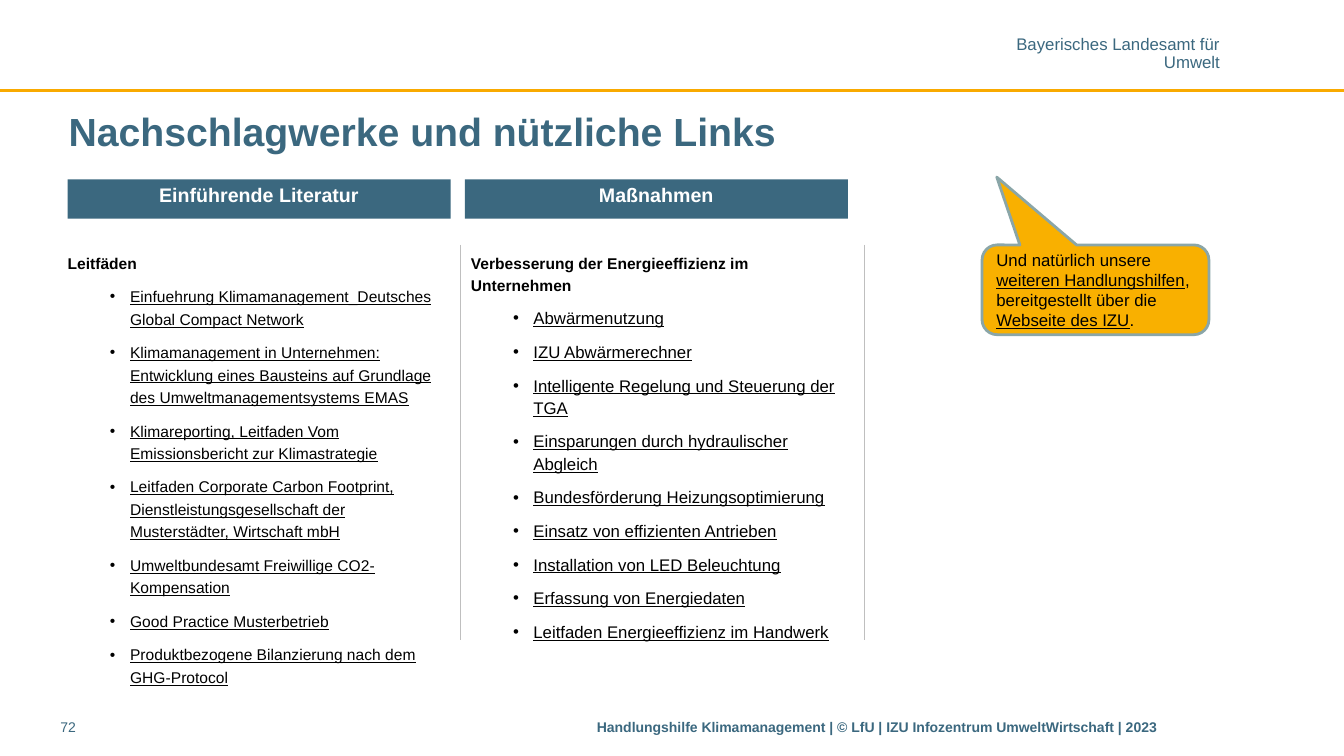
from lxml import etree
from pptx import Presentation
from pptx.dml.color import RGBColor
from pptx.enum.shapes import MSO_CONNECTOR, MSO_SHAPE
from pptx.enum.text import MSO_ANCHOR, MSO_AUTO_SIZE, PP_ALIGN
from pptx.oxml.ns import qn
from pptx.util import Inches, Pt

BLUE = RGBColor(0x3B, 0x68, 0x7F)
GOLD = RGBColor(0xF9, 0xAA, 0x00)
CALLOUT_GOLD = RGBColor(0xF9, 0xB0, 0x00)
CALLOUT_EDGE = RGBColor(0x8A, 0xA6, 0xA8)
GREY = RGBColor(0xBF, 0xBF, 0xBF)
BLACK = RGBColor(0x00, 0x00, 0x00)
WHITE = RGBColor(0xFF, 0xFF, 0xFF)

SLIDE_W, SLIDE_H = 13.33, 7.5
LEFT, COLUMN_STEP, COLUMN_W = 0.67, 4.0, 3.78
BAR_TOP, BAR_STEP, BAR_W, BAR_H = 1.78, 3.94, 3.8, 0.39
LIST_TOP, DIVIDER_BOTTOM = 2.43, 6.35
FOOTER_TOP, FOOTER_H = 7.08, 0.31

COLUMNS = [
    ("Einführende Literatur", "Leitfäden", 4.56, 11.1, [
        "Einfuehrung Klimamanagement_Deutsches Global Compact Network",
        "Klimamanagement in Unternehmen: Entwicklung eines Bausteins auf "
        "Grundlage des Umweltmanagementsystems EMAS",
        "Klimareporting, Leitfaden Vom Emissionsbericht zur Klimastrategie",
        "Leitfaden Corporate Carbon Footprint, Dienstleistungsgesellschaft "
        "der Musterstädter, Wirtschaft mbH",
        "Umweltbundesamt Freiwillige CO2-Kompensation",
        "Good Practice Musterbetrieb",
        "Produktbezogene Bilanzierung nach dem GHG-Protocol",
    ]),
    ("Maßnahmen", "Verbesserung der Energieeffizienz im Unternehmen", 4.15, 12, [
        "Abwärmenutzung",
        "IZU Abwärmerechner",
        "Intelligente Regelung und Steuerung der TGA",
        "Einsparungen durch hydraulischer Abgleich",
        "Bundesförderung Heizungsoptimierung",
        "Einsatz von effizienten Antrieben",
        "Installation von LED Beleuchtung",
        "Erfassung von Energiedaten",
        "Leitfaden Energieeffizienz im Handwerk",
    ]),
]

prs = Presentation()
prs.slide_width, prs.slide_height = Inches(SLIDE_W), Inches(SLIDE_H)
slide = prs.slides.add_slide(prs.slide_layouts[5])


def add_rule(x1, y1, x2, y2, color, width):
    """Draw a straight line without a shadow."""
    rule = slide.shapes.add_connector(
        MSO_CONNECTOR.STRAIGHT, Inches(x1), Inches(y1), Inches(x2), Inches(y2))
    rule.line.color.rgb = color
    rule.line.width = Pt(width)
    etree.SubElement(rule._element.spPr, qn("a:effectLst"))


def write(shape, lines, size, color, bold=False, inset=0.05):
    """Fill a shape with one paragraph per line and return its text frame."""
    frame = shape.text_frame
    frame.text = "\n".join(lines)
    frame.word_wrap = True
    frame.auto_size = MSO_AUTO_SIZE.NONE
    frame.margin_left = frame.margin_right = 0
    frame.margin_top = frame.margin_bottom = Inches(inset)
    for paragraph in frame.paragraphs:
        for run in paragraph.runs:
            run.font.name = "Arial"
            run.font.size = Pt(size)
            run.font.color.rgb = color
            run.font.bold = bold
    return frame


# Page frame
add_rule(0, 0.9, SLIDE_W, 0.9, GOLD, 2)

agency = slide.shapes.add_textbox(Inches(10.07), Inches(0.37), Inches(2.03), Inches(0.34))
agency_text = write(agency, ["Bayerisches Landesamt für", "Umwelt"], 12, BLUE, inset=0)
for paragraph in agency_text.paragraphs:
    paragraph.alignment = PP_ALIGN.RIGHT
    paragraph.line_spacing = 0.85

title = slide.shapes.title
title.left, title.top = Inches(0.68), Inches(0.83)
title.width, title.height = Inches(8.94), Inches(0.94)
title_text = write(title, ["Nachschlagwerke und nützliche Links"], 28, BLUE, bold=True)
title_text.vertical_anchor = MSO_ANCHOR.MIDDLE
title_text.paragraphs[0].alignment = PP_ALIGN.LEFT

for left, width, words, bold in [
    (0.6, 0.7, "72", False),
    (5.92, 6.99, "Handlungshilfe Klimamanagement | © LfU | "
                 "IZU Infozentrum UmweltWirtschaft | 2023", True),
]:
    footer = slide.shapes.add_textbox(
        Inches(left), Inches(FOOTER_TOP), Inches(width), Inches(FOOTER_H))
    write(footer, [words], 10, BLUE, bold)

# Link columns
for index, (heading, topic, height, link_size, links) in enumerate(COLUMNS):
    left = LEFT + index * COLUMN_STEP
    bar = slide.shapes.add_shape(
        MSO_SHAPE.RECTANGLE, Inches(LEFT + index * BAR_STEP), Inches(BAR_TOP),
        Inches(BAR_W), Inches(BAR_H))
    bar.shadow.inherit = False
    bar.fill.solid()
    bar.fill.fore_color.rgb = BLUE
    bar.line.fill.background()
    bar_text = write(bar, [heading], 14, WHITE, bold=True)
    bar_text.vertical_anchor = MSO_ANCHOR.TOP
    bar_text.paragraphs[0].alignment = PP_ALIGN.CENTER
    bar_text.paragraphs[0].line_spacing = Pt(16)

    add_rule(left + 3.9, LIST_TOP, left + 3.9, DIVIDER_BOTTOM, GREY, 0.75)

    link_list = slide.shapes.add_textbox(
        Inches(left), Inches(LIST_TOP), Inches(COLUMN_W), Inches(height))
    topic_line, *link_lines = write(link_list, [topic, *links], link_size, BLACK).paragraphs
    topic_line.line_spacing = Pt(16)
    topic_line.runs[0].font.size = Pt(11.1)
    topic_line.runs[0].font.bold = True
    for line in link_lines:
        line.level = 1
        line.line_spacing = Pt(16)
        line.space_before = Pt(8)
        line.runs[0].font.underline = True
        properties = line._p.get_or_add_pPr()
        properties.set("marL", str(Inches(0.62)))
        properties.set("indent", str(Inches(-0.2)))
        bullet_color = etree.SubElement(properties, qn("a:buClr"))
        etree.SubElement(bullet_color, qn("a:srgbClr"), val=str(BLACK))
        etree.SubElement(properties, qn("a:buFont"), typeface="Arial")
        etree.SubElement(properties, qn("a:buChar"), char="•")

# Callout
callout = slide.shapes.add_shape(
    MSO_SHAPE.ROUNDED_RECTANGULAR_CALLOUT,
    Inches(9.74), Inches(LIST_TOP), Inches(2.25), Inches(0.89))
for index, value in enumerate((-0.435, -1.256, 0.167)):
    callout.adjustments[index] = value
callout.shadow.inherit = False
callout.fill.solid()
callout.fill.fore_color.rgb = CALLOUT_GOLD
callout.line.color.rgb = CALLOUT_EDGE
callout.line.width = Pt(2)
callout_text = callout.text_frame
callout_text.word_wrap = True
callout_text.vertical_anchor = MSO_ANCHOR.MIDDLE
hint = callout_text.paragraphs[0]
hint.alignment = PP_ALIGN.LEFT
for words, underlined in [
    ("Und natürlich unsere ", False),
    ("weiteren Handlungshilfen", True),
    (", bereitgestellt über die ", False),
    ("Webseite des IZU", True),
    (".", False),
]:
    run = hint.add_run()
    run.text = words
    run.font.name = "Arial"
    run.font.size = Pt(12)
    run.font.color.rgb = BLACK
    run.font.underline = underlined

prs.save("out.pptx")
